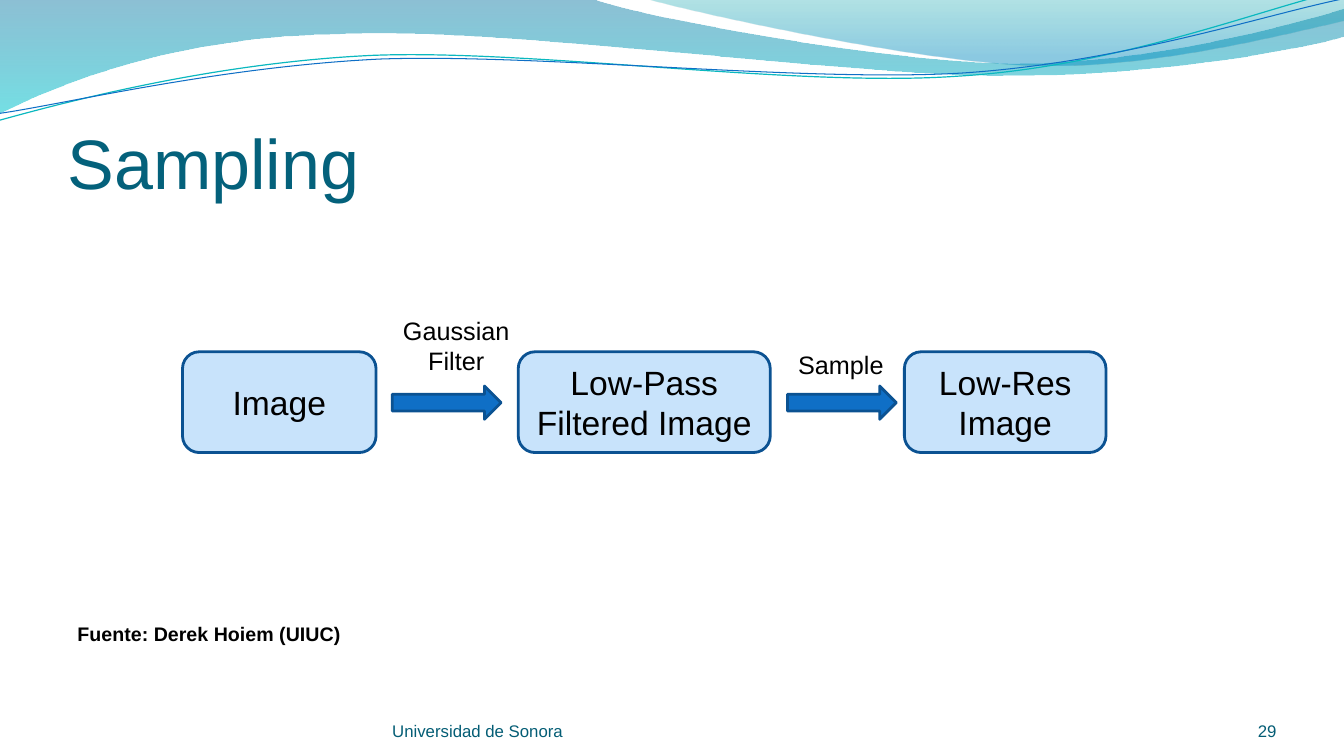
from dataclasses import dataclass

import lxml.etree
import pptx
import pptx.util
import pptx.dml.color
import pptx.enum.shapes
import pptx.enum.text
import pptx.oxml
import pptx.oxml.ns

ALIGN = pptx.enum.text.PP_ALIGN
ANCHOR = pptx.enum.text.MSO_ANCHOR
SHAPE = pptx.enum.shapes.MSO_SHAPE
qn = pptx.oxml.ns.qn


@dataclass(frozen=True)
class Theme:
    font: str = "Arial"
    title: str = "04617B"
    footer: str = "045D75"
    ink: str = "000000"
    box: str = "C8E3FB"
    outline: str = "0B5292"
    arrow: str = "0F6FC6"
    teal_line: str = "0AB8BF"
    wide_wave: tuple = ((0, "0074A1", 45), (1, "00C6CF", 55))
    right_wave: tuple = ((0, "00A1A9", 30), (0.8, "008BBF", 45))
    title_size: int = 50
    box_size: int = 24
    label_size: int = 18
    source_size: int = 14
    footer_size: int = 12


THEME = Theme()


def px(value):
    return pptx.util.Emu(round(value * 9144))


def rgb(color):
    return pptx.dml.color.RGBColor.from_string(color)


def write_text(shape, text, size, color, align=ALIGN.LEFT, anchor=ANCHOR.TOP, bold=False):
    frame = shape.text_frame
    frame.text = text
    frame.vertical_anchor = anchor
    for paragraph in frame.paragraphs:
        paragraph.alignment = align
        for run in paragraph.runs:
            run.font.name = THEME.font
            run.font.size = pptx.util.Pt(size)
            run.font.bold = bold
            run.font.color.rgb = rgb(color)


def add_text(slide, box, text, size, color, margins=(0, 0, 0, 0), wrap=True, **style):
    shape = slide.shapes.add_textbox(*map(px, box))
    frame = shape.text_frame
    frame.word_wrap = wrap
    frame.margin_left, frame.margin_top, frame.margin_right, frame.margin_bottom = map(px, margins)
    write_text(shape, text, size, color, **style)


def add_block(slide, kind, box, fill):
    shape = slide.shapes.add_shape(kind, *map(px, box))
    shape.shadow.inherit = False
    shape.fill.solid()
    shape.fill.fore_color.rgb = rgb(fill)
    shape.line.color.rgb = rgb(THEME.outline)
    shape.line.width = pptx.util.Pt(2)
    return shape


def bend_lines(shape, segments):
    lines = iter(list(shape._element.spPr.iter(qn("a:lnTo"))))
    for segment in segments:
        first, *others = [next(lines) for _ in range(len(segment) // 2)]
        if others:
            curve = lxml.etree.SubElement(first.getparent(), qn("a:cubicBezTo"))
            first.addprevious(curve)
            for line in (first, *others):
                curve.append(line[0])
                line.getparent().remove(line)


def add_outline(slide, start, segments, close):
    points = [(px(x), px(y)) for segment in segments
              for x, y in zip(segment[::2], segment[1::2])]
    builder = slide.shapes.build_freeform(px(start[0]), px(start[1]))
    builder.add_line_segments(points, close=close)
    shape = builder.convert_to_shape()
    bend_lines(shape, segments)
    shape.shadow.inherit = False
    return shape


def add_wave(slide, start, segments, stops):
    shape = add_outline(slide, start, segments, True)
    shape.line.fill.background()
    shape.fill.gradient()
    shape.fill.gradient_angle = 270
    for stop, (position, color, _) in zip(shape.fill.gradient_stops, stops):
        stop.position = position
        stop.color.rgb = rgb(color)
    for element, (_, _, opacity) in zip(shape._element.spPr.iter(qn("a:srgbClr")), stops):
        lxml.etree.SubElement(element, qn("a:alpha"), val=str(opacity * 1000))


def add_wave_line(slide, start, curves, color, width):
    shape = add_outline(slide, start, curves, False)
    shape.rotation = 357.3
    shape.fill.background()
    shape.line.color.rgb = rgb(color)
    shape.line.width = pptx.util.Pt(width)


def draw_waves(slide, box):
    left, top, width, _ = box
    right = left + width

    add_wave(slide, (left, top), [
        (left + 587, top - 1),
        (634, 17, 885, 63, 1011, 63), (1138, 63, 1278, 26, right, 9), (right + 2, 36),
        (1311, 44, 1160, 76, 994, 75), (829, 75, 509, 28, 343, 34),
        (172, 36, 61, 83, left - 1, 113),
    ], THEME.wide_wave)
    add_wave(slide, (left + 639, top - 1), [
        (679, 11, 909, 62, 1025, 65), (1141, 69, 1282, 32, right, 21), (right, top),
    ], THEME.right_wave)
    add_wave_line(slide, (left - 3, top + 88), [
        (63, 73, 211, 41, 369, 41), (528, 42, 788, 93, 949, 89),
        (1109, 87, 1254, 36, right, 22),
    ], THEME.teal_line, 0.85)
    add_wave_line(slide, (left - 2, top + 81), [
        (62, 75, 218, 45, 378, 45), (537, 47, 795, 88, 954, 86),
        (1114, 83, 1257, 42, right + 3, 30),
    ], THEME.arrow, 0.75)


def draw_flow(slide, box):
    left, top, _, height = box
    for offset, width, name in ((333, 250, "Low-Pass Filtered Image"), (0, 192, "Image"),
                                (716, 200, "Low-Res Image")):
        stage = add_block(slide, SHAPE.ROUNDED_RECTANGLE,
                          (left + offset, top, width, height), THEME.box)
        stage.text_frame.word_wrap = True
        write_text(stage, name, THEME.box_size, THEME.ink, ALIGN.CENTER, ANCHOR.MIDDLE)
    for offset, rise, width, label_height, label in ((208, 41, 127, 71, "Gaussian\nFilter"),
                                                     (600, 7, 106, 40, "Sample")):
        add_block(slide, SHAPE.RIGHT_ARROW, (left + offset, top + 34, 108, 33), THEME.arrow)
        add_text(slide, (left + offset, top - rise, width, label_height),
                 label, THEME.label_size, THEME.ink, (10, 5, 10, 5), False, align=ALIGN.CENTER)


def draw_footer(slide, box):
    left, top, width, height = box
    number_width = 111
    add_text(slide, (left + 322, top, 489, height), "Universidad de Sonora",
             THEME.footer_size, THEME.footer, anchor=ANCHOR.BOTTOM)
    add_text(slide, (left + width - number_width, top, number_width, height), "29",
             THEME.footer_size, THEME.footer, align=ALIGN.RIGHT, anchor=ANCHOR.BOTTOM)


def draw_sampling_slide(slide, box):
    left, top, width, height = box
    margin = 67
    content_left, content_width = left + margin, width - 2 * margin
    draw_waves(slide, (left, top, width, 120))
    add_text(slide, (content_left, top + 77, content_width, 125), "Sampling",
             THEME.title_size, THEME.title, (0, 5, 0, 0), anchor=ANCHOR.BOTTOM)
    add_text(slide, (content_left, top + 612, content_width, 32), "Fuente: Derek Hoiem (UIUC)",
             THEME.source_size, THEME.ink, (10, 5, 10, 5), bold=True)
    draw_flow(slide, (left + 181, top + 349, 916, 100))
    draw_footer(slide, (content_left, top + height - 55, content_width, 40))


def main():
    presentation = pptx.Presentation()
    presentation.slide_width, presentation.slide_height = px(1333), px(750)
    slide = presentation.slides.add_slide(presentation.slide_layouts[6])
    draw_sampling_slide(slide, (0, 0, 1333, 750))
    presentation.save("out.pptx")


if __name__ == "__main__":
    main()
